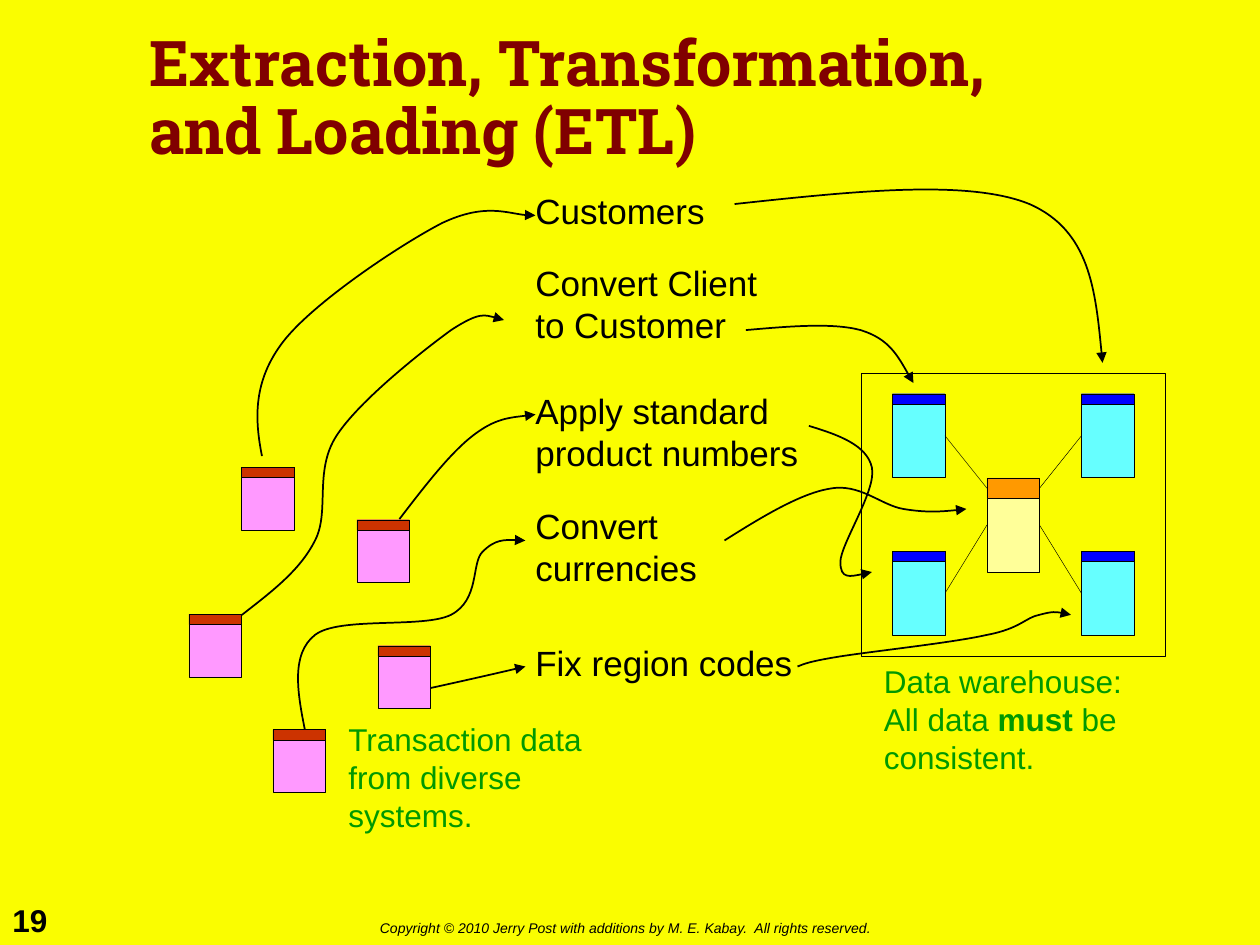
"""Build the extraction, transformation and loading slide."""
from lxml.etree import SubElement
from pptx import Presentation
from pptx.dml.color import RGBColor
from pptx.enum.shapes import MSO_CONNECTOR, MSO_SHAPE
from pptx.enum.text import MSO_ANCHOR, MSO_AUTO_SIZE, PP_ALIGN
from pptx.oxml.ns import qn
from pptx.util import Inches, Pt

YELLOW = RGBColor(0xFA, 0xFD, 0x00)
MAROON = RGBColor(0x80, 0x00, 0x00)
BLACK = RGBColor(0x00, 0x00, 0x00)
GREEN = RGBColor(0x00, 0x99, 0x00)
CREAM = RGBColor(0xFF, 0xFF, 0x99)
ORANGE = RGBColor(0xFF, 0x99, 0x00)
CYAN = RGBColor(0x66, 0xFF, 0xFF)
BLUE = RGBColor(0x00, 0x00, 0xFF)
PINK = RGBColor(0xFF, 0x99, 0xFF)
RED = RGBColor(0xCC, 0x33, 0x00)

CELL = Inches(1) / 12
HUNDREDTH = Inches(1) / 100


def cells(*counts):
    return [round(count * CELL) for count in counts]


def write(shape, text, size, color=BLACK, font="Arial", bold=False, italic=False,
          wrap=True, anchor=MSO_ANCHOR.TOP, spacing=1.0):
    frame = shape.text_frame
    frame.word_wrap = wrap
    frame.auto_size = MSO_AUTO_SIZE.NONE
    frame.vertical_anchor = anchor
    for index, line in enumerate(text.split("\n")):
        paragraph = frame.add_paragraph() if index else frame.paragraphs[0]
        paragraph.alignment = PP_ALIGN.LEFT
        paragraph.line_spacing = spacing
        for part, words in enumerate(line.split("*")):
            run = paragraph.add_run()
            run.text = words
            run.font.name = font
            run.font.size = Pt(size)
            run.font.bold = bold or part % 2 == 1
            run.font.italic = italic
            run.font.color.rgb = color


presentation = Presentation()
presentation.slide_width, presentation.slide_height = Inches(10), Inches(7.5)
slide = presentation.slides.add_slide(presentation.slide_layouts[5])
slide.background.fill.solid()
slide.background.fill.fore_color.rgb = YELLOW

title = slide.shapes.title
title.left, title.top, title.width, title.height = cells(13, 2, 94, 15)
write(title, "Extraction, Transformation, and Loading (ETL)", 36, color=MAROON,
      font="Roboto Slab", bold=True, anchor=MSO_ANCHOR.MIDDLE, spacing=0.9)

warehouse_tables = [(column, row, 8, 1, CYAN, BLUE)
                    for row in (37.5, 52.5) for column in (103, 85)]
source_tables = [(column, row, 6, 1, PINK, RED) for column, row in
                 [(23, 44.5), (18, 58.5), (36, 61.5), (34, 49.5), (26, 69.5)]]
rectangles = [(82, 35.5, 29, 27, None)]
for column, row, height, header, body_color, header_color in [
        (94, 45.5, 9, 2, CREAM, ORANGE), *warehouse_tables, *source_tables]:
    rectangles += [(column, row, 5, height, body_color),
                   (column, row, 5, header, header_color)]

for column, row, width, height, color in rectangles:
    shape = slide.shapes.add_shape(MSO_SHAPE.RECTANGLE, *cells(column, row, width, height))
    shape.shadow.inherit = False
    shape.line.color.rgb = BLACK
    shape.line.width = Pt(0.25)
    if color is None:
        shape.fill.background()
    else:
        shape.fill.solid()
        shape.fill.fore_color.rgb = color

for outer, inner in [(90, 94), (103, 99)]:
    for outer_row, inner_row in [(41.5, 46.5), (56.5, 50)]:
        connector = slide.shapes.add_connector(
            MSO_CONNECTOR.STRAIGHT, *cells(outer, outer_row, inner, inner_row))
        connector.line.color.rgb = BLACK
        connector.line.width = Pt(0.25)
        SubElement(connector._element.spPr, qn("a:effectLst"))

flows = [
    [(192, 488), (215, 470), (238, 453), (250, 429), (262, 406), (249, 374), (267, 346),
     (285, 318), (336, 278), (358, 262), (381, 247), (390, 251), (400, 254)],
    [(592, 262), (626, 259), (661, 256), (683, 262), (706, 269), (715, 287), (725, 304)],
    [(208, 362), (202, 332), (201, 302), (225, 271), (249, 240), (318, 194), (351, 177),
     (385, 161), (410, 172), (425, 171)],
    [(583, 162), (676, 152), (768, 142), (817, 162), (865, 183), (870, 235), (875, 288)],
    [(317, 412), (337, 386), (357, 360), (375, 346), (393, 332), (409, 331), (425, 329)],
    [(642, 338), (665, 345), (688, 353), (692, 371), (696, 389), (667, 432), (667, 446),
     (667, 460), (679, 457), (692, 454)],
    [(242, 579), (236, 549), (231, 519), (250, 504), (269, 489), (336, 499), (358, 488),
     (381, 476), (374, 447), (383, 438), (393, 428), (405, 428), (417, 429)],
    [(575, 429), (605, 410), (635, 392), (658, 388), (682, 383), (699, 401), (717, 404),
     (735, 407), (751, 406), (767, 404)],
    [(342, 546), (342, 546), (379, 538), (417, 529)],
    [(633, 529), (638, 527), (642, 525), (667, 521), (692, 517), (757, 510), (783, 504),
     (810, 499), (814, 490), (825, 488), (836, 485), (843, 486), (850, 488)],
]
for start, *points in flows:
    builder = slide.shapes.build_freeform(*start, scale=HUNDREDTH)
    builder.add_line_segments(points, close=False)
    arrow = builder.convert_to_shape()
    arrow.shadow.inherit = False
    arrow.fill.background()
    arrow.line.color.rgb = BLACK
    arrow.line.width = Pt(1)
    SubElement(arrow.line._get_or_add_ln(), qn("a:tailEnd"), type="triangle")
    outline = next(arrow._element.iter(qn("a:path")))
    segments = outline.findall(qn("a:lnTo"))
    for first in range(0, len(segments), 3):
        curve = SubElement(outline, qn("a:cubicBezTo"))
        for segment in segments[first:first + 3]:
            curve.append(segment[0])
            outline.remove(segment)

labels = [
    (49.8, 17.5, 20, 5.2, "Customers", 20, BLACK),
    (49.8, 24.3, 24.25, 9.2, "Convert Client to Customer", 20, BLACK),
    (49.8, 36.5, 30.25, 9.2, "Apply standard product numbers", 20, BLACK),
    (49.8, 47.5, 20, 9.2, "Convert currencies", 20, BLACK),
    (49.8, 60.5, 30.25, 5.2, "Fix region codes", 20, BLACK),
    (83, 62.5, 28, 12, "Data warehouse:\nAll data *must* be consistent.", 18, GREEN),
    (32, 68, 28, 12, "Transaction data from diverse systems.", 18, GREEN),
]
for column, row, width, height, text, size, color in labels:
    box = slide.shapes.add_textbox(*cells(column, row, width, height))
    write(box, text, size, color=color)

number = slide.shapes.add_textbox(*cells(0, 85.2, 6.1, 4.8))
write(number, "19", 18, bold=True, wrap=False)
footer = slide.shapes.add_textbox(*cells(35, 87, 50.6, 2.9))
write(footer, "Copyright © 2010 Jerry Post with additions by M. E. Kabay.  All rights reserved.",
      8, italic=True, wrap=False)

presentation.save("out.pptx")
